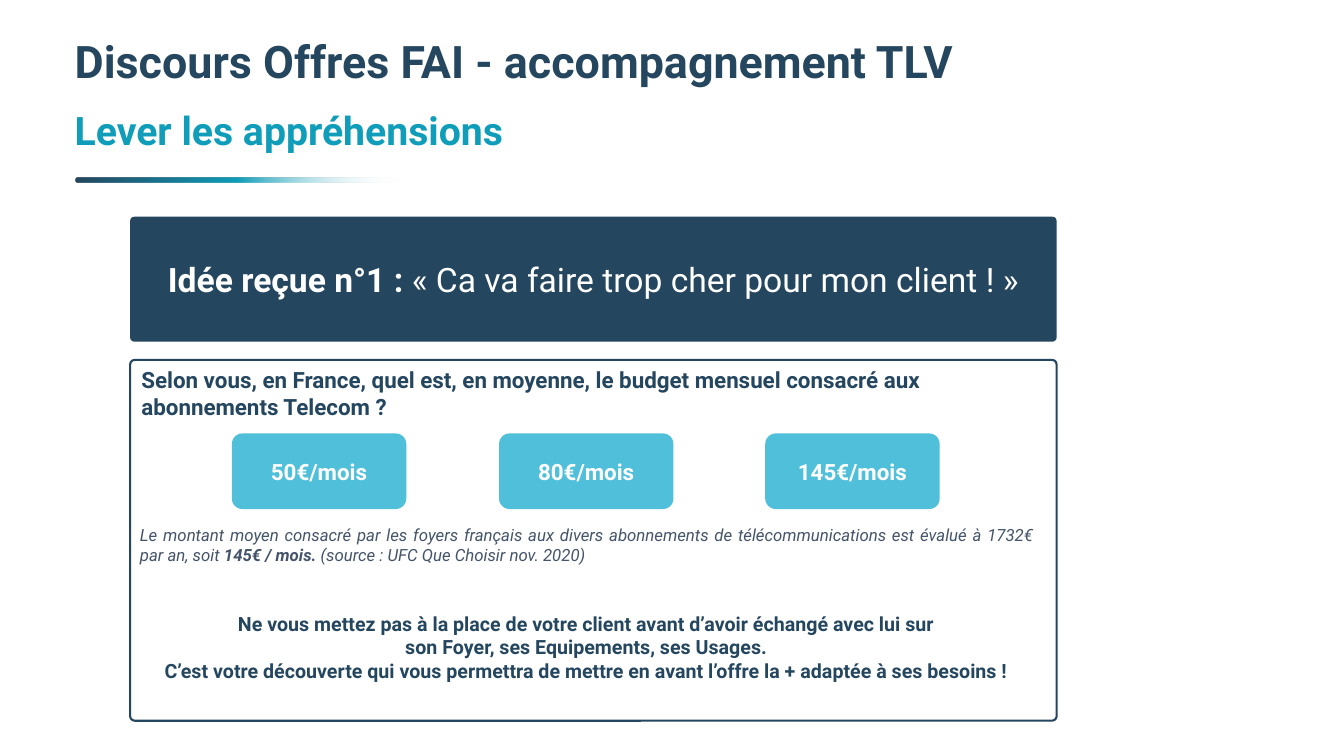
from lxml import etree
from pptx import Presentation
from pptx.dml import color
from pptx.enum import shapes, text
from pptx.oxml import ns
from pptx.util import Inches, Pt

NAVY = "25465F"
TEAL = "109DB9"
SKY = "50BFDA"
SLATE = "44546A"
WHITE = "FFFFFF"


def rgb(value):
    return color.RGBColor.from_string(value)


def write(box, paragraphs, size, ink, align="LEFT", anchor="TOP", italic=False, spacing=None):
    frame = box.text_frame
    frame.word_wrap = True
    frame.auto_size = text.MSO_AUTO_SIZE.NONE
    frame.vertical_anchor = text.MSO_ANCHOR[anchor]
    for index, spans in enumerate(paragraphs):
        para = frame.add_paragraph() if index else frame.paragraphs[0]
        para.alignment = text.PP_ALIGN[align]
        para.space_before = Pt(0)
        para.line_spacing = spacing
        for words, bold in spans:
            span = para.add_run()
            span.text = words
            span.font.name = "Roboto"
            span.font.size = Pt(size)
            span.font.bold = bold
            span.font.italic = italic
            span.font.color.rgb = rgb(ink)


deck = Presentation()
deck.slide_width = Inches(13.33)
deck.slide_height = Inches(7.5)
page = deck.slides.add_slide(deck.slide_layouts[1])

headings = [
    (page.shapes.title, 0.34, "Discours Offres FAI - accompagnement TLV", 32, NAVY),
    (page.placeholders[1], 1.06, "Lever les appréhensions", 28, TEAL),
]
for box, top, words, size, ink in headings:
    box.left, box.top = Inches(0.64), Inches(top)
    box.width, box.height = Inches(10.73), Inches(0.72)
    write(box, [[(words, True)]], size, ink, spacing=0.9)
    properties = box.text_frame.paragraphs[0]._p.get_or_add_pPr()
    properties.set("marL", "0")
    properties.set("indent", "0")
    etree.SubElement(properties, ns.qn("a:buNone"))

panels = {}
for name, left, top, width, height, corner, fill in [
    ("rule", 0.75, 1.76, 3.21, 0.05, 0.5, None),
    ("banner", 1.29, 2.15, 9.19, 1.24, 0.034, NAVY),
    ("question", 1.29, 3.57, 9.19, 3.58, 0.013, None),
    ("50€/mois", 2.3, 4.3, 1.73, 0.75, 0.139, SKY),
    ("80€/mois", 4.95, 4.3, 1.73, 0.75, 0.139, SKY),
    ("145€/mois", 7.59, 4.3, 1.73, 0.75, 0.139, SKY),
]:
    box = page.shapes.add_shape(
        shapes.MSO_SHAPE.ROUNDED_RECTANGLE, Inches(left), Inches(top), Inches(width), Inches(height)
    )
    box.adjustments[0] = corner
    box.shadow.inherit = False
    box.line.fill.background()
    if fill:
        box.fill.solid()
        box.fill.fore_color.rgb = rgb(fill)
    else:
        box.fill.background()
    if name.endswith("mois"):
        write(box, [[(name, True)]], 16, WHITE, align="CENTER", anchor="MIDDLE")
    panels[name] = box

rule = panels["rule"]
rule.fill.gradient()
rule.fill.gradient_angle = 0
stops = rule._element.spPr.find(ns.qn("a:gradFill")).find(ns.qn("a:gsLst"))
for stop in list(stops):
    stops.remove(stop)
for position, value, alpha in [(0, NAVY, 100), (50, TEAL, 100), (99, WHITE, 0)]:
    stop = etree.SubElement(stops, ns.qn("a:gs"), pos=str(position * 1000))
    tint = etree.SubElement(stop, ns.qn("a:srgbClr"), val=value)
    etree.SubElement(tint, ns.qn("a:alpha"), val=str(alpha * 1000))

write(
    panels["banner"],
    [[("Idée reçue n°1 : ", True), ("« Ca va faire trop cher pour mon client ! »", False)]],
    24, WHITE, align="CENTER", anchor="MIDDLE",
)

question = panels["question"]
question.line.color.rgb = rgb(NAVY)
question.line.width = Pt(1.5)
write(
    question,
    [[("Selon vous, en France, quel est, en moyenne, le budget mensuel consacré aux abonnements Telecom ?", True)]],
    16, NAVY,
)

answer = page.shapes.add_textbox(Inches(1.29), Inches(5.16), Inches(9.07), Inches(0.5))
write(
    answer,
    [[
        ("Le montant moyen consacré par les foyers français aux divers abonnements de "
         "télécommunications est évalué à 1732€ par an, soit ", False),
        ("145€ / mois.", True),
        (" (source : UFC Que Choisir nov. 2020)", False),
    ]],
    12, SLATE, align="JUSTIFY", italic=True,
)

advice = page.shapes.add_textbox(Inches(1.28), Inches(6.02), Inches(9.07), Inches(0.81))
write(
    advice,
    [
        [("Ne vous mettez pas à la place de votre client avant d’avoir échangé avec lui sur", True)],
        [("son Foyer, ses Equipements, ses Usages.", True)],
        [("C’est votre découverte qui vous permettra de mettre en avant l’offre la + adaptée à ses besoins !", True)],
    ],
    14, NAVY, align="CENTER",
)

deck.save("out.pptx")
